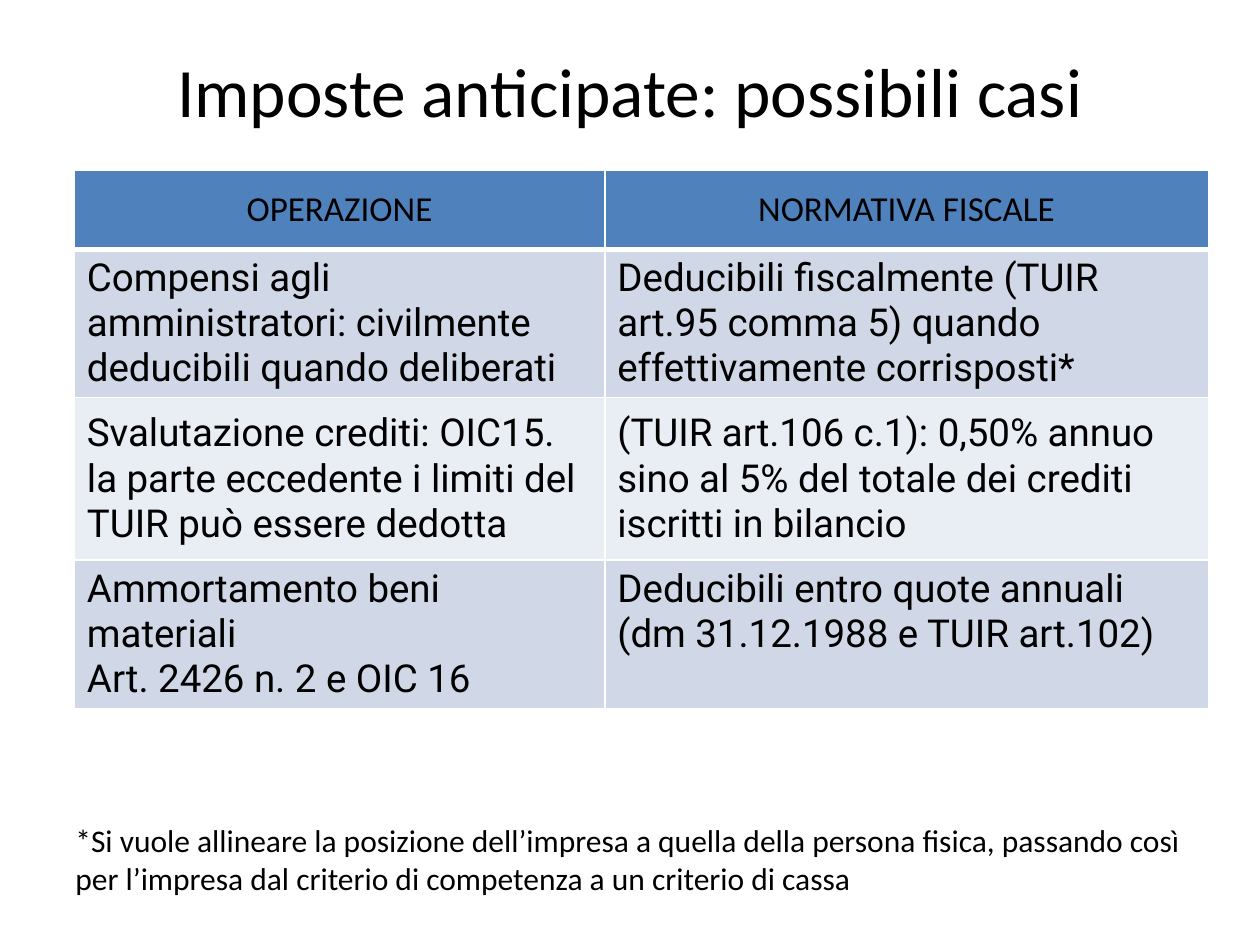
from lxml.etree import SubElement
from pptx import Presentation
from pptx.dml.color import RGBColor
from pptx.enum.text import MSO_ANCHOR, MSO_AUTO_SIZE, PP_ALIGN
from pptx.oxml.ns import qn
from pptx.util import Inches, Pt

COLORS = {"text": "000000", "border": "FFFFFF", "header": "4F81BD",
          "odd": "D0D8E8", "even": "E9EDF4"}
FORMATS = {
    "title": {"size": Pt(39.6), "name": "Calibri", "bold": False},
    "header": {"size": Pt(20), "name": "Calibri", "bold": False},
    "body": {"size": Pt(22), "name": "Roboto", "bold": False},
    "note": {"size": Pt(18), "name": "Calibri", "bold": False},
}
COLUMN_WIDTHS = [4.21, 4.79]
ROW_HEIGHTS = [0.63, 1.12, 1.29, 1.12]
ROWS = [
    ["OPERAZIONE", "NORMATIVA FISCALE"],
    ["Compensi agli amministratori: civilmente deducibili quando deliberati",
     "Deducibili fiscalmente (TUIR art.95 comma 5) quando effettivamente corrisposti*"],
    ["Svalutazione crediti: OIC15. la parte eccedente i limiti del TUIR può essere dedotta",
     "(TUIR art.106 c.1): 0,50% annuo sino al 5% del totale dei crediti iscritti in bilancio"],
    ["Ammortamento beni materiali\nArt. 2426 n. 2 e OIC 16",
     "Deducibili entro quote annuali (dm 31.12.1988 e TUIR art.102)"],
]
NOTE = ("*Si vuole allineare la posizione dell’impresa a quella della persona fisica, "
        "passando così per l’impresa dal criterio di competenza a un criterio di cassa")


def write_text(text_frame, text, style, alignment=PP_ALIGN.LEFT):
    text_frame.text = text
    for paragraph in text_frame.paragraphs:
        paragraph.alignment = alignment
        for attribute, value in FORMATS[style].items():
            setattr(paragraph.font, attribute, value)
        paragraph.font.color.rgb = RGBColor.from_string(COLORS["text"])


def add_borders(cell, bottom_width):
    properties = cell._tc.get_or_add_tcPr()
    for side, width in {"L": 1, "R": 1, "T": 1, "B": bottom_width}.items():
        line = SubElement(properties, qn(f"a:ln{side}"), w=str(Pt(width)))
        fill = SubElement(line, qn("a:solidFill"))
        SubElement(fill, qn("a:srgbClr"), val=COLORS["border"])


presentation = Presentation()
presentation.slide_width, presentation.slide_height = Inches(10), Inches(7.5)
slide = presentation.slides.add_slide(presentation.slide_layouts[5])

title = slide.shapes.title
title.left, title.top, title.width, title.height = map(Inches, (0.5, 0.3, 9, 0.82))
write_text(title.text_frame, "Imposte anticipate: possibili casi", "title", PP_ALIGN.CENTER)
title.text_frame.vertical_anchor = MSO_ANCHOR.MIDDLE

table = slide.shapes.add_table(
    len(ROWS), len(COLUMN_WIDTHS), Inches(0.59), Inches(1.35),
    Inches(sum(COLUMN_WIDTHS)), Inches(sum(ROW_HEIGHTS))).table
for column, width in zip(table.columns, COLUMN_WIDTHS):
    column.width = Inches(width)
for row_index, (row, height, texts) in enumerate(zip(table.rows, ROW_HEIGHTS, ROWS)):
    row.height = Inches(height)
    is_header = row_index == 0
    style = "header" if is_header else "body"
    fill_name = "header" if is_header else "odd" if row_index % 2 else "even"
    for cell, text in zip(row.cells, texts):
        write_text(cell.text_frame, text, style,
                   PP_ALIGN.CENTER if is_header else PP_ALIGN.LEFT)
        cell.vertical_anchor = MSO_ANCHOR.MIDDLE
        add_borders(cell, 3 if is_header else 1)
        cell.fill.solid()
        cell.fill.fore_color.rgb = RGBColor.from_string(COLORS[fill_name])
table.cell(3, 1).vertical_anchor = MSO_ANCHOR.TOP

note = slide.shapes.add_textbox(Inches(0.5), Inches(6.47), Inches(9), Inches(0.71))
note.text_frame.word_wrap = True
note.text_frame.auto_size = MSO_AUTO_SIZE.SHAPE_TO_FIT_TEXT
write_text(note.text_frame, NOTE, "note")

presentation.save("out.pptx")
